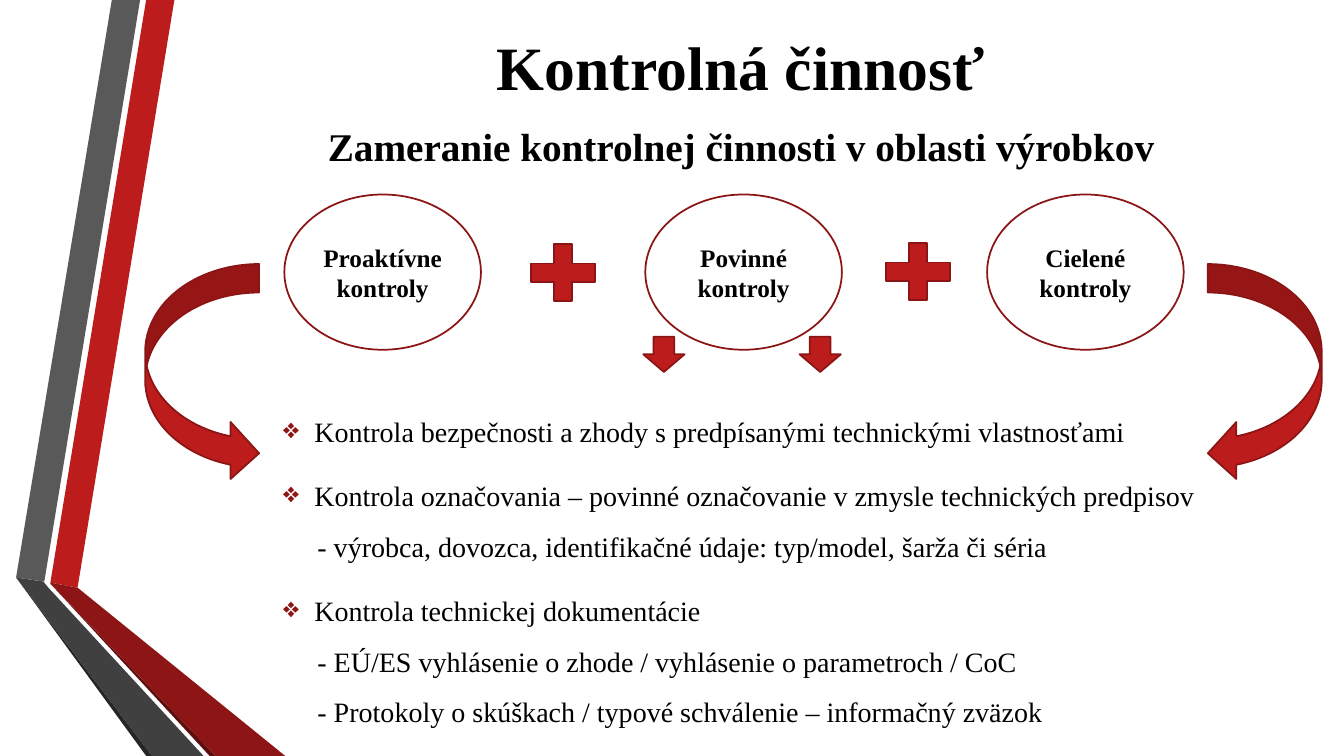
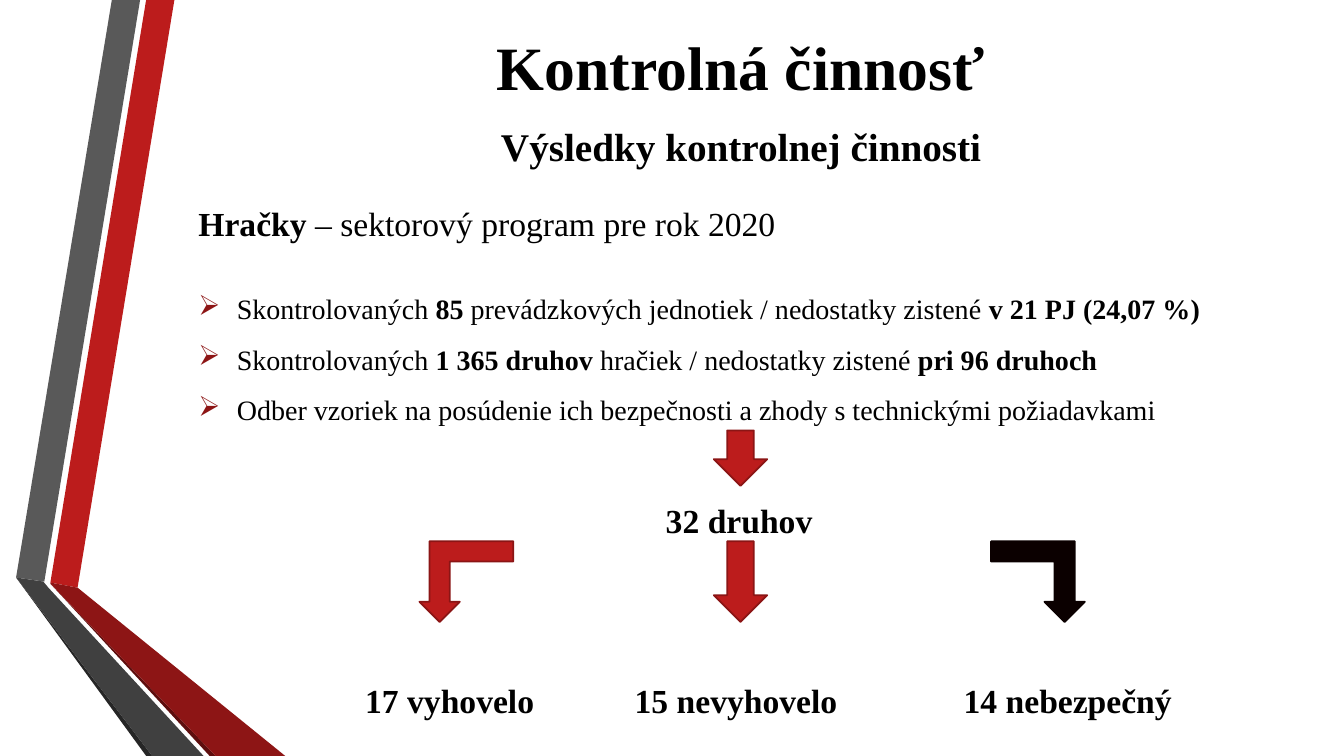
import dataclasses

import pptx
import pptx.dml.color
import pptx.enum.shapes
import pptx.enum.text
import pptx.oxml
import pptx.oxml.ns
import pptx.util

PX = 9144
FONT = "Times New Roman"

BLACK = pptx.dml.color.RGBColor(0x00, 0x00, 0x00)
NEAR_BLACK = pptx.dml.color.RGBColor(0x0B, 0x00, 0x00)
WHITE = pptx.dml.color.RGBColor(0xFF, 0xFF, 0xFF)
RED = pptx.dml.color.RGBColor(0xBC, 0x1C, 0x1C)
DARK_RED = pptx.dml.color.RGBColor(0x8B, 0x15, 0x15)
BAND_RED = pptx.dml.color.RGBColor(0x8D, 0x15, 0x15)
DEEP_RED = pptx.dml.color.RGBColor(0x5E, 0x0E, 0x0E)
GREY = pptx.dml.color.RGBColor(0x59, 0x59, 0x59)
DARK_GREY = pptx.dml.color.RGBColor(0x40, 0x40, 0x40)
DEEP_GREY = pptx.dml.color.RGBColor(0x26, 0x26, 0x26)

KIND = pptx.enum.shapes.MSO_SHAPE
ALIGN = pptx.enum.text.PP_ALIGN
ANCHOR = pptx.enum.text.MSO_ANCHOR


@dataclasses.dataclass(frozen=True)
class Box:
    left: int
    top: int
    width: int
    height: int

    def emu(self) -> tuple[int, int, int, int]:
        return self.left * PX, self.top * PX, self.width * PX, self.height * PX


@dataclasses.dataclass(frozen=True)
class Band:
    colour: pptx.dml.color.RGBColor
    points: tuple[tuple[int, int], ...]


@dataclasses.dataclass(frozen=True)
class Span:
    text: str
    bold: bool = False


@dataclasses.dataclass(frozen=True)
class Para:
    spans: tuple[Span, ...]
    size: int = 20
    align: ALIGN = ALIGN.LEFT
    spacing: float = 1.0
    before: int = 0
    after: int = 0
    bullet: str = ""
    indent: int = 0


@dataclasses.dataclass(frozen=True)
class Figure:
    kind: KIND
    box: Box
    fill: pptx.dml.color.RGBColor = RED
    line: pptx.dml.color.RGBColor = DARK_RED
    label: str = ""
    rotation: int = 0
    flipped: bool = False


BANDS = (
    Band(RED, ((50, 578), (77, 583), (173, 0), (145, 0))),
    Band(GREY, ((139, 0), (111, 0), (16, 573), (44, 577))),
    Band(DEEP_GREY, ((16, 573), (145, 750), (151, 750))),
    Band(DEEP_RED, ((50, 579), (208, 750), (214, 750))),
    Band(BAND_RED, ((50, 578), (50, 579), (214, 750), (283, 750), (77, 583))),
    Band(DARK_GREY, ((16, 573), (151, 750), (202, 750), (48, 583), (43, 577))),
)


def centred(text: str, size: int) -> Para:
    return Para((Span(text, True),), size, ALIGN.CENTER)


def diamond(text: str, spacing: float = 1.5, after: int = 0) -> Para:
    return Para((Span(text),), spacing=spacing, after=after, bullet="❖", indent=31)


def detail(text: str, after: int = 0) -> Para:
    return Para((Span(text),), spacing=1.5, after=after, indent=34)


def arrowed(*spans: Span, before: int = 0) -> Para:
    return Para(spans, spacing=1.5, before=before, bullet="➢", indent=38)


def add_bullet(paragraph, mark: str) -> None:
    properties = paragraph._p.get_or_add_pPr()
    namespace = pptx.oxml.ns.nsdecls("a")
    for xml in (
        f'<a:buClr {namespace}><a:srgbClr val="{BAND_RED}"/></a:buClr>',
        f'<a:buChar {namespace} char="{mark}"/>',
    ):
        properties.append(pptx.oxml.parse_xml(xml))


def write(frame, paras: tuple[Para, ...]) -> None:
    frame.word_wrap = True
    for index, para in enumerate(paras):
        paragraph = frame.add_paragraph() if index else frame.paragraphs[0]
        paragraph.alignment = para.align
        paragraph.line_spacing = para.spacing
        paragraph.space_before = pptx.util.Pt(para.before)
        paragraph.space_after = pptx.util.Pt(para.after)
        properties = paragraph._p.get_or_add_pPr()
        properties.set("marL", str(para.indent * PX))
        properties.set("indent", str(-para.indent * PX if para.bullet else 0))
        if para.bullet:
            add_bullet(paragraph, para.bullet)
        paragraph.font.name = FONT
        paragraph.font.size = pptx.util.Pt(para.size)
        paragraph.font.color.rgb = BLACK
        same_weight = len({span.bold for span in para.spans}) == 1
        if same_weight:
            paragraph.font.bold = para.spans[0].bold
        for span in para.spans:
            run = paragraph.add_run()
            run.text = span.text
            if not same_weight:
                run.font.bold = span.bold


def add_text(page, box: Box, *paras: Para, anchor: ANCHOR = ANCHOR.TOP) -> None:
    frame = page.shapes.add_textbox(*box.emu()).text_frame
    frame.vertical_anchor = anchor
    write(frame, paras)


def add_band(page, band: Band) -> None:
    builder = page.shapes.build_freeform(*band.points[0], scale=PX)
    builder.add_line_segments(band.points[1:], close=True)
    shape = builder.convert_to_shape()
    shape.shadow.inherit = False
    shape.fill.solid()
    shape.fill.fore_color.rgb = band.colour
    shape.line.fill.background()


def add_figure(page, figure: Figure) -> None:
    shape = page.shapes.add_shape(figure.kind, *figure.box.emu())
    shape.shadow.inherit = False
    shape.fill.solid()
    shape.fill.fore_color.rgb = figure.fill
    shape.line.color.rgb = figure.line
    shape.line.width = pptx.util.Pt(1.25)
    shape.rotation = figure.rotation
    if figure.flipped:
        shape._element.spPr.xfrm.set("flipH", "1")
    if figure.label:
        frame = shape.text_frame
        frame.margin_left = frame.margin_right = 0
        frame.vertical_anchor = ANCHOR.MIDDLE
        write(frame, (centred(figure.label, 18),))


def add_page(deck, subtitle: str):
    page = deck.slides.add_slide(deck.slide_layouts[6])
    for band in BANDS:
        add_band(page, band)
    add_text(page, Box(187, 0, 1096, 131), centred("Kontrolná činnosť", 44), anchor=ANCHOR.MIDDLE)
    add_text(page, Box(278, 116, 914, 57), centred(subtitle, 28))
    return page


def build_focus(deck) -> None:
    page = add_page(deck, "Zameranie kontrolnej činnosti v oblasti výrobkov")
    add_text(
        page,
        Box(271, 373, 933, 358),
        diamond("Kontrola bezpečnosti a zhody s predpísanými technickými vlastnosťami", 2.0, 10),
        diamond("Kontrola označovania – povinné označovanie v zmysle technických predpisov"),
        detail("- výrobca, dovozca, identifikačné údaje: typ/model, šarža či séria", 10),
        diamond("Kontrola technickej dokumentácie"),
        detail("- EÚ/ES vyhlásenie o zhode / vyhlásenie o parametroch / CoC"),
        detail("- Protokoly o skúškach / typové schválenie – informačný zväzok"),
    )
    figures = [
        Figure(KIND.CURVED_RIGHT_ARROW, Box(144, 262, 113, 216)),
        Figure(KIND.CURVED_LEFT_ARROW, Box(1198, 262, 113, 216)),
        Figure(KIND.MATH_PLUS, Box(515, 232, 87, 77)),
        Figure(KIND.MATH_PLUS, Box(867, 231, 87, 77)),
    ]
    figures += [Figure(KIND.DOWN_ARROW, Box(left, 334, 41, 35)) for left in (638, 793)]
    figures += [
        Figure(KIND.OVAL, Box(left, 193, 195, 154), WHITE, label=f"{name} kontroly")
        for left, name in ((282, "Proaktívne"), (640, "Povinné"), (979, "Cielené"))
    ]
    for figure in figures:
        add_figure(page, figure)


def build_results(deck) -> None:
    page = add_page(deck, "Výsledky kontrolnej činnosti")
    add_text(
        page,
        Box(187, 196, 1112, 240),
        Para((Span("Hračky", True), Span(" – sektorový program pre rok 2020")), 24),
        arrowed(
            Span("Skontrolovaných "),
            Span("85", True),
            Span(" prevádzkových jednotiek / nedostatky zistené "),
            Span("v 21 PJ (24,07 %)", True),
            before=23,
        ),
        arrowed(
            Span("Skontrolovaných "),
            Span("1 365 druhov ", True),
            Span("hračiek / nedostatky zistené "),
            Span("pri 96 druhoch", True),
        ),
        arrowed(Span("Odber vzoriek na posúdenie ich bezpečnosti a zhody s technickými požiadavkami")),
    )
    for centre, top, text in (
        (733, 491, "32 druhov"),
        (446, 670, "17 vyhovelo"),
        (730, 670, "15 nevyhovelo"),
        (1059, 670, "14 nebezpečný"),
    ):
        add_text(page, Box(centre - 130, top, 260, 50), centred(text, 24), anchor=ANCHOR.MIDDLE)
    for figure in (
        Figure(KIND.DOWN_ARROW, Box(708, 427, 53, 55)),
        Figure(KIND.BENT_UP_ARROW, Box(416, 537, 93, 80), rotation=180),
        Figure(KIND.BENT_UP_ARROW, Box(983, 537, 93, 80), NEAR_BLACK, NEAR_BLACK, rotation=180, flipped=True),
        Figure(KIND.DOWN_ARROW, Box(708, 537, 53, 80)),
    ):
        add_figure(page, figure)


def main() -> None:
    deck = pptx.Presentation()
    deck.slide_width = 1333 * PX
    deck.slide_height = 750 * PX
    build_focus(deck)
    build_results(deck)
    deck.save("out.pptx")


if __name__ == "__main__":
    main()
